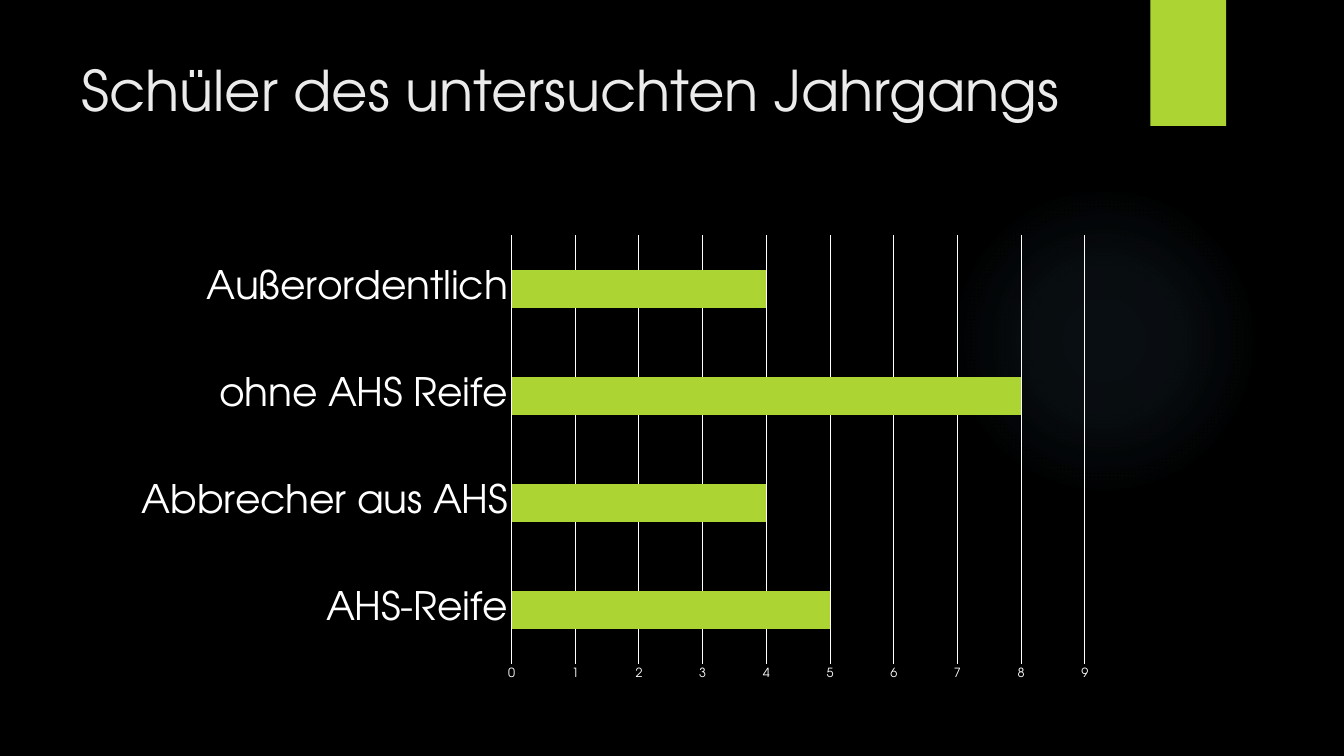
from lxml import etree
from pptx import Presentation
from pptx import util as u
from pptx.chart.data import CategoryChartData
from pptx.dml.color import RGBColor
from pptx.enum import chart as charts, shapes, text
from pptx.oxml.ns import qn

WIDTH, HEIGHT = u.Inches(13.33), u.Inches(7.5)
FONT = "TeX Gyre Adventor"
COLORS = {
    "background": "000000",
    "accent": "ACD433",
    "glow": "7AC4F0",
    "title": "EBEBEB",
    "chart": "FFFFFF",
}
GLOW_STOPS = [(0, 7), (36, 6), (69, 0)]  # position and opacity in percent
PUPILS = {
    "AHS-Reife": 5,
    "Abbrecher aus AHS": 4,
    "ohne AHS Reife": 8,
    "Außerordentlich": 4,
}


def color(name):
    return RGBColor.from_string(COLORS[name])


def area(left, top, width, height):
    """Turn shares of the slide's size into lengths."""
    return (int(left * WIDTH), int(top * HEIGHT),
            int(width * WIDTH), int(height * HEIGHT))


def style_font(font, size, color_name):
    font.name = FONT
    font.size = u.Pt(size)
    font.color.rgb = color(color_name)


def style_line(line, color_name):
    line.color.rgb = color(color_name)
    line.width = u.Pt(0.75)


def add_plain_shape(slide, kind, box, color_name):
    shape = slide.shapes.add_shape(kind, *box)
    shape.shadow.inherit = False
    shape.fill.solid()
    shape.fill.fore_color.rgb = color(color_name)
    shape.line.fill.background()
    return shape


def add_glow(slide, box):
    shape = add_plain_shape(slide, shapes.MSO_SHAPE.OVAL, box, "glow")
    gradient = etree.Element(qn("a:gradFill"), rotWithShape="1")
    stops = etree.SubElement(gradient, qn("a:gsLst"))
    for position, opacity in GLOW_STOPS:
        stop = etree.SubElement(stops, qn("a:gs"), pos=str(position * 1000))
        tint = etree.SubElement(stop, qn("a:srgbClr"), val=COLORS["glow"])
        etree.SubElement(tint, qn("a:alpha"), val=str(opacity * 1000))
    circle = etree.SubElement(gradient, qn("a:path"), path="circle")
    etree.SubElement(circle, qn("a:fillToRect"),
                     {side: "50000" for side in "ltrb"})
    properties = shape.element.spPr
    properties.replace(properties.find(qn("a:solidFill")), gradient)


def add_title(slide, box, wording):
    frame = slide.shapes.add_textbox(*box).text_frame
    frame.word_wrap = True
    frame.vertical_anchor = text.MSO_ANCHOR.TOP
    paragraph = frame.paragraphs[0]
    paragraph.text = wording
    style_font(paragraph.font, 40, "title")


def add_bar_chart(slide, box, values):
    data = CategoryChartData()
    data.categories = list(values)
    data.add_series("Series 1", list(values.values()))
    chart = slide.shapes.add_chart(
        charts.XL_CHART_TYPE.BAR_CLUSTERED, *box, data).chart
    chart.has_legend = False
    chart.has_title = False
    style_font(chart.font, 10, "chart")

    # Bars
    plot = chart.plots[0]
    plot.gap_width = 182
    plot.vary_by_categories = False
    bars = plot.series[0].format.fill
    bars.solid()
    bars.fore_color.rgb = color("accent")

    # Axes
    for axis, size in ((chart.category_axis, 28), (chart.value_axis, 9)):
        axis.major_tick_mark = charts.XL_TICK_MARK.NONE
        axis.minor_tick_mark = charts.XL_TICK_MARK.NONE
        style_font(axis.tick_labels.font, size, "chart")
    style_line(chart.category_axis.format.line, "chart")
    chart.value_axis.format.line.fill.background()
    chart.value_axis.has_major_gridlines = True
    style_line(chart.value_axis.major_gridlines.format.line, "chart")


def main():
    presentation = Presentation()
    presentation.slide_width, presentation.slide_height = WIDTH, HEIGHT
    slide = presentation.slides.add_slide(presentation.slide_layouts[6])

    # Background and decoration
    slide.background.fill.solid()
    slide.background.fill.fore_color.rgb = color("background")
    add_glow(slide, area(0.706, 0.244, 0.231, 0.411))
    add_plain_shape(slide, shapes.MSO_SHAPE.RECTANGLE,
                    area(0.856, 0, 0.0563, 0.1667), "accent")

    # Content
    add_title(slide, area(0.0533, 0.0667, 0.772, 0.204),
              "Schüler des untersuchten Jahrgangs")
    add_bar_chart(slide, area(0.0908, 0.2987, 0.7337, 0.612), PUPILS)

    presentation.save("out.pptx")


if __name__ == "__main__":
    main()
